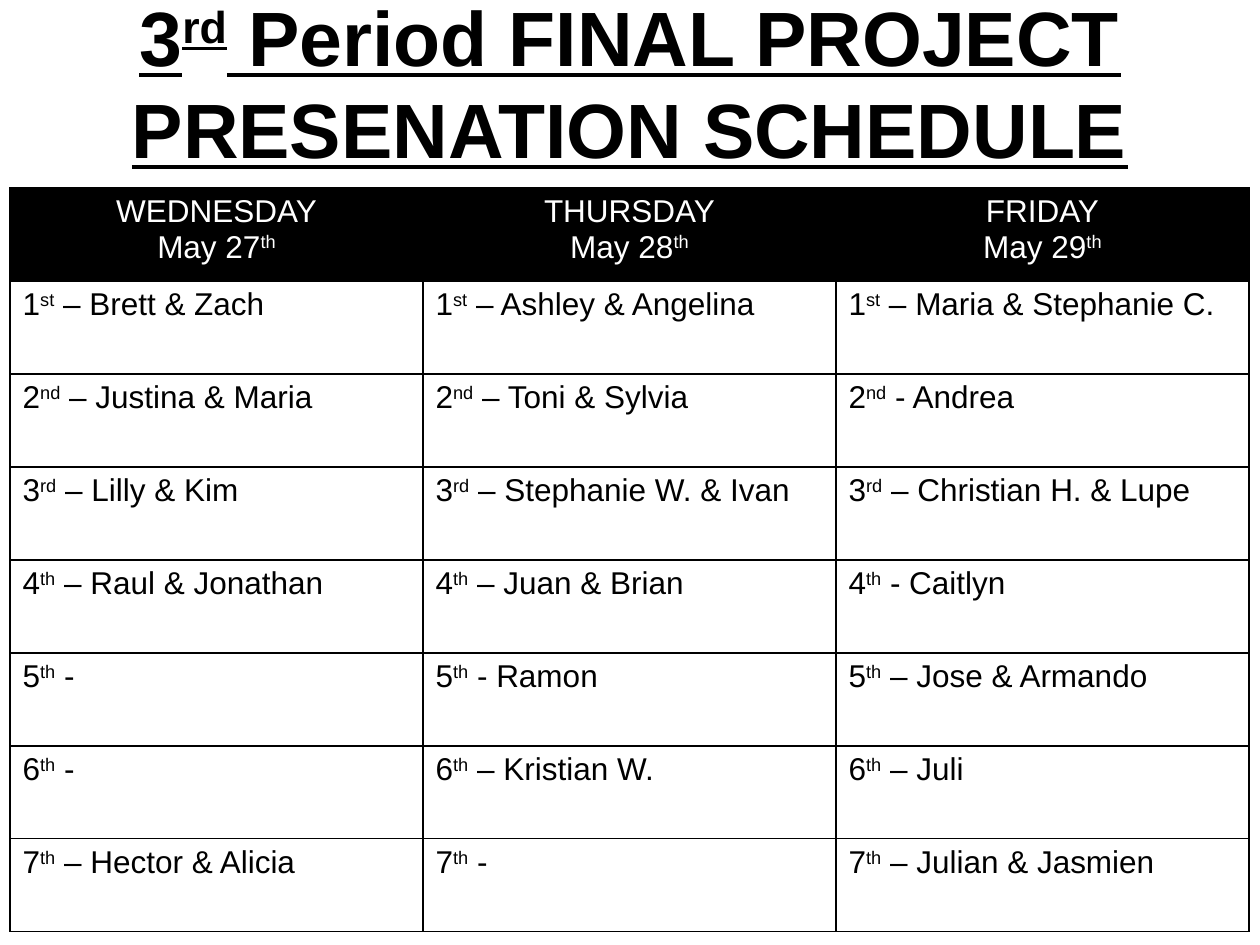
import pptx
import pptx.util
import pptx.dml.color
import pptx.enum.text
import pptx.oxml
import pptx.oxml.ns

PX = 914400 // 126
COLORS = {"ink": "000000", "paper": "FFFFFF"}
ALIGN = pptx.enum.text.PP_ALIGN
DAYS = [("WEDNESDAY", "27"), ("THURSDAY", "28"), ("FRIDAY", "29")]
SUFFIXES = ["st", "nd", "rd", "th", "th", "th", "th"]
SCHEDULE = [
    ["– Brett & Zach", "– Ashley & Angelina", "– Maria & Stephanie C."],
    ["– Justina & Maria", "– Toni & Sylvia", "- Andrea"],
    ["– Lilly & Kim", "– Stephanie W. & Ivan", "– Christian H. & Lupe"],
    ["– Raul & Jonathan", "– Juan & Brian", "- Caitlyn"],
    ["-", "- Ramon", "– Jose & Armando"],
    ["-", "– Kristian W.", "– Juli"],
    ["– Hector & Alicia", "-", "– Julian & Jasmien"],
]


def write(para, texts, size, color, align):
    para.alignment = align
    para.font.name = "Arial"
    para.font.size = pptx.util.Pt(size)
    para.font.color.rgb = pptx.dml.color.RGBColor.from_string(COLORS[color])
    for position, text in enumerate(texts):
        span = para.add_run()
        span.text = text
        if position == 1:
            span.font._element.set("baseline", "30000")


def style_cell(cell, fill):
    cell.fill.solid()
    cell.fill.fore_color.rgb = pptx.dml.color.RGBColor.from_string(COLORS[fill])
    properties = cell._tc.get_or_add_tcPr()
    for index, side in enumerate(["lnL", "lnR", "lnT", "lnB"]):
        border = pptx.oxml.parse_xml(
            f'<a:{side} {pptx.oxml.ns.nsdecls("a")} w="12700"><a:solidFill>'
            f'<a:srgbClr val="{COLORS["ink"]}"/></a:solidFill></a:{side}>'
        )
        properties.insert(index, border)


deck = pptx.Presentation()
deck.slide_width = 1260 * PX
deck.slide_height = 945 * PX
page = deck.slides.add_slide(deck.slide_layouts[5])

title = page.shapes.title
title.left, title.top, title.width, title.height = 0, 38 * PX, 1260 * PX, 88 * PX
frame = title.text_frame
frame.auto_size = pptx.enum.text.MSO_AUTO_SIZE.NONE
frame.vertical_anchor = pptx.enum.text.MSO_ANCHOR.MIDDLE
write(frame.paragraphs[0], ["3", "rd", " Period FINAL PROJECT"], 44, "ink", ALIGN.CENTER)
write(frame.add_paragraph(), ["PRESENATION SCHEDULE"], 44, "ink", ALIGN.CENTER)
for para in frame.paragraphs:
    para.font.bold = True
    para.font.underline = True

table = page.shapes.add_table(
    len(SCHEDULE) + 1, len(DAYS), 10 * PX, 188 * PX, 1239 * PX, 744 * PX
).table
for row in table.rows:
    row.height = 93 * PX
for column, (day, date) in enumerate(DAYS):
    table.columns[column].width = 413 * PX
    cell = table.cell(0, column)
    style_cell(cell, "ink")
    write(cell.text_frame.paragraphs[0], [day], 18, "paper", ALIGN.CENTER)
    write(cell.text_frame.add_paragraph(), [f"May {date}", "th"], 18, "paper", ALIGN.CENTER)
    for number, (suffix, names) in enumerate(zip(SUFFIXES, SCHEDULE), start=1):
        cell = table.cell(number, column)
        style_cell(cell, "paper")
        texts = [str(number), suffix, f" {names[column]}"]
        write(cell.text_frame.paragraphs[0], texts, 18, "ink", ALIGN.LEFT)

deck.save("out.pptx")
